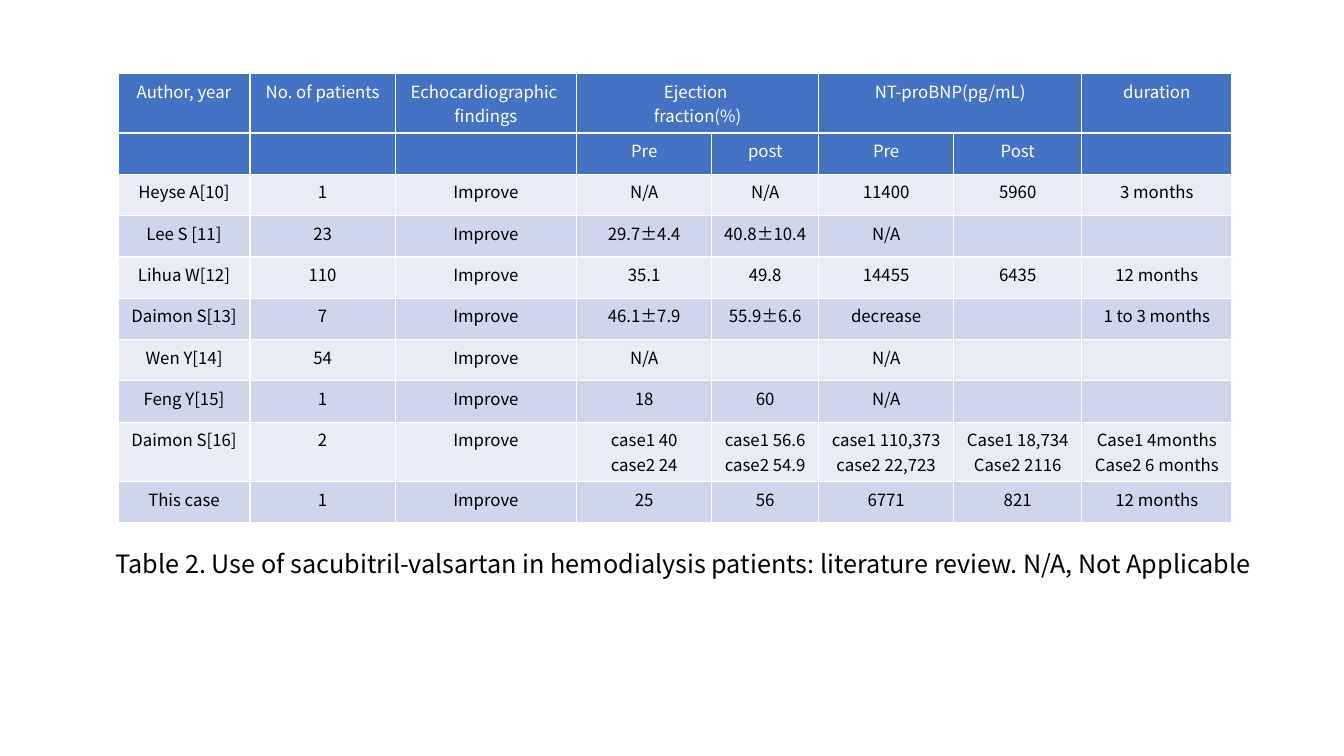
import pptx
import pptx.dml.color
import pptx.enum.text
import pptx.oxml.ns
import pptx.util
from lxml import etree
from pptx.util import Inches

FONT = "Noto Sans CJK JP"
COLORS = {"header": "4472C4", "light": "E9EBF5", "dark": "CFD5EA",
          "white": "FFFFFF", "black": "000000"}
COL_WIDTHS = [1.31, 1.44, 1.8, 1.34, 1.06, 1.34, 1.27, 1.49]
ROW_HEIGHT = 0.41
TALL_HEIGHT = 0.59
ROWS = [
    ["Author, year", "No. of patients", "Echocardiographic \nfindings",
     "Ejection \nfraction(%)", "", "NT-proBNP(pg/mL)", "", "duration"],
    ["", "", "", "Pre", "post", "Pre", "Post", ""],
    ["Heyse A[10]", "1", "Improve", "N/A", "N/A", "11400", "5960", "3 months"],
    ["Lee S [11]", "23", "Improve", "29.7±4.4", "40.8±10.4", "N/A", "", ""],
    ["Lihua W[12]", "110", "Improve", "35.1", "49.8", "14455", "6435", "12 months"],
    ["Daimon S[13]", "7", "Improve", "46.1±7.9", "55.9±6.6", "decrease", "", "1 to 3 months"],
    ["Wen Y[14]", "54", "Improve", "N/A", "", "N/A", "", ""],
    ["Feng Y[15]", "1", "Improve", "18", "60", "N/A", "", ""],
    ["Daimon S[16]", "2", "Improve", "case1 40\ncase2 24", "case1 56.6\ncase2 54.9",
     "case1 110,373\ncase2 22,723", "Case1 18,734\nCase2 2116",
     "Case1 4months\nCase2 6 months"],
    ["This case", "1", "Improve", "25", "56", "6771", "821", "12 months"],
]


def rgb(name):
    return pptx.dml.color.RGBColor.from_string(COLORS[name])


def format_runs(p, size, color):
    for r in p.runs:
        r.font.size = pptx.util.Pt(size)
        r.font.name = FONT
        r.font.color.rgb = rgb(color)
        ea = etree.SubElement(r.font._element, pptx.oxml.ns.qn("a:ea"))
        ea.set("typeface", FONT)


prs = pptx.Presentation()
prs.slide_width = Inches(13.33)
prs.slide_height = Inches(7.5)
s = prs.slides.add_slide(prs.slide_layouts[6])

table = s.shapes.add_table(len(ROWS), len(COL_WIDTHS), Inches(1.17), Inches(0.73),
                           Inches(sum(COL_WIDTHS)), Inches(ROW_HEIGHT * len(ROWS))).table
for col, width in zip(table.columns, COL_WIDTHS):
    col.width = Inches(width)

for i, row in enumerate(ROWS):
    is_tall = any("\n" in text for text in row)
    table.rows[i].height = Inches(TALL_HEIGHT if is_tall else ROW_HEIGHT)
    fill = "header" if i < 2 else ("light", "dark")[i % 2]
    for j, text in enumerate(row):
        cell = table.cell(i, j)
        cell.fill.solid()
        cell.fill.fore_color.rgb = rgb(fill)
        cell.text_frame.text = text
        for p in cell.text_frame.paragraphs:
            p.alignment = pptx.enum.text.PP_ALIGN.CENTER
            format_runs(p, 12, "white" if i < 2 else "black")

for j in (3, 5):
    table.cell(0, j).merge(table.cell(0, j + 1))

caption = s.shapes.add_textbox(Inches(1.05), Inches(5.39), Inches(11.66), Inches(0.4))
tf = caption.text_frame
tf.word_wrap = False
tf.auto_size = pptx.enum.text.MSO_AUTO_SIZE.SHAPE_TO_FIT_TEXT
tf.text = ("Table 2. Use of sacubitril-valsartan in hemodialysis patients: "
           "literature review. N/A, Not Applicable")
format_runs(tf.paragraphs[0], 18, "black")

prs.save("out.pptx")
